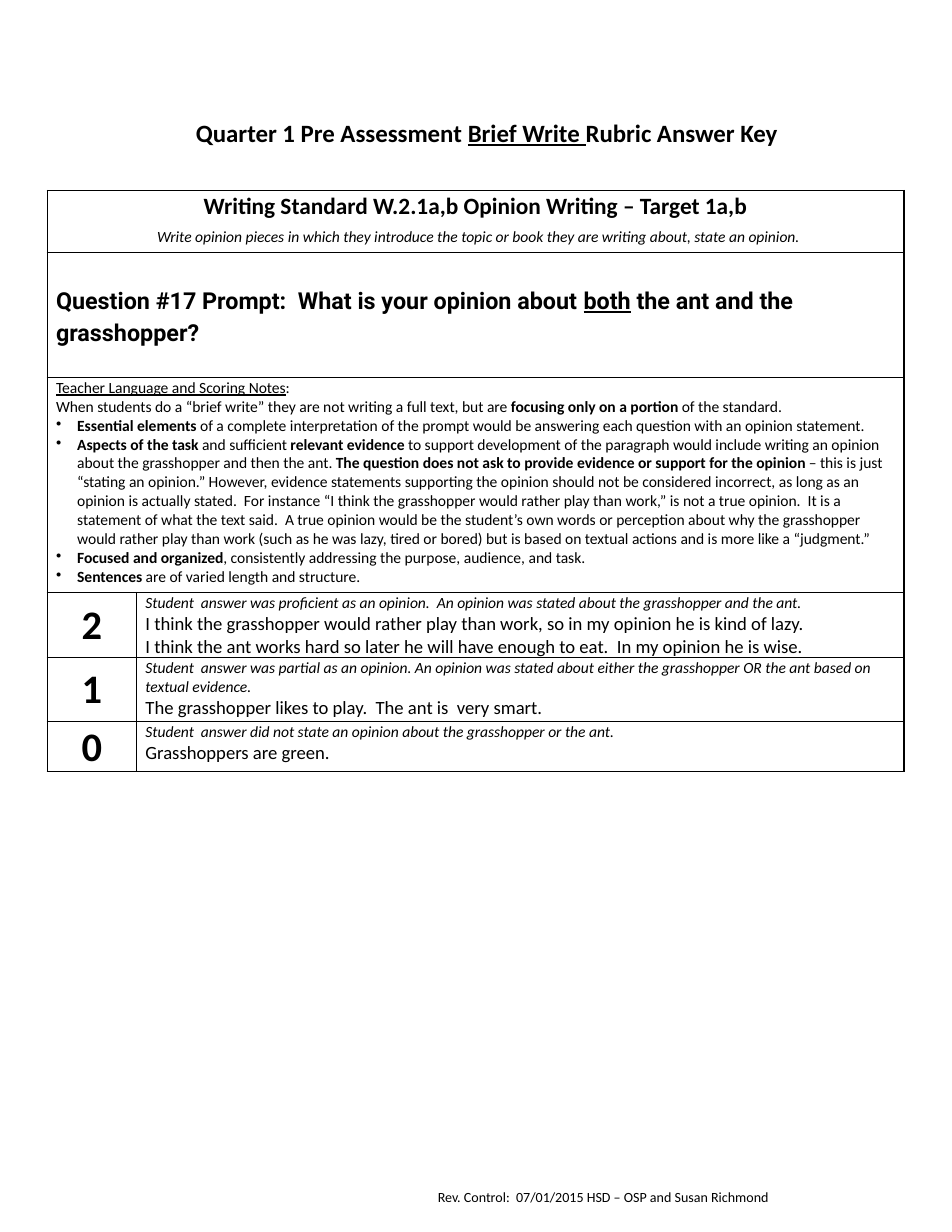
"""Build the one-page brief write rubric answer key."""
from dataclasses import dataclass
from typing import NamedTuple

from lxml import etree
from pptx import Presentation
from pptx import util as u
from pptx.dml.color import RGBColor
from pptx.enum import text as t
from pptx.oxml.ns import qn


@dataclass(frozen=True)
class Theme:
    ink: RGBColor = RGBColor(0, 0, 0)
    paper: RGBColor = RGBColor(255, 255, 255)
    body_font: str = "Calibri"
    prompt_font: str = "Roboto"
    title: float = 16
    heading: float = 15
    note: float = 10
    answer: float = 12
    score: float = 26
    footer: float = 9
    border: float = 1


THEME = Theme()


class Span(NamedTuple):
    text: str
    size: float = THEME.note
    bold: bool = False
    italic: bool = False
    underline: bool = False
    font: str = THEME.body_font


class Para(NamedTuple):
    spans: list[Span]
    centred: bool = False
    bullet: bool = False
    spacing: float | None = None


class Score(NamedTuple):
    points: str
    note: str
    answers: list[str]


TITLE = Para([
    Span("Quarter 1 Pre Assessment ", THEME.title, bold=True),
    Span("Brief Write ", THEME.title, bold=True, underline=True),
    Span("Rubric Answer Key", THEME.title, bold=True),
], centred=True)

FOOTER = Para([Span("Rev. Control:  07/01/2015 HSD – OSP and Susan Richmond", THEME.footer)])

STANDARD = [
    Para([Span("Writing Standard W.2.1a,b Opinion Writing – Target 1a,b", THEME.heading, bold=True)], centred=True),
    Para([
        Span(" ", THEME.heading),
        Span("Write opinion pieces in which they introduce the topic or book they are writing about, "
             "state an opinion.", italic=True),
    ], centred=True),
]

PROMPT = [Para([
    Span("Question #17 Prompt:  What is your opinion about ", THEME.heading, bold=True, font=THEME.prompt_font),
    Span("both", THEME.heading, bold=True, underline=True, font=THEME.prompt_font),
    Span(" the ant and the grasshopper?", THEME.heading, bold=True, font=THEME.prompt_font),
], spacing=1.15)]

NOTES = [
    Para([Span("Teacher Language and Scoring Notes", underline=True), Span(":")]),
    Para([
        Span("When students do a “brief write” they are not writing a full text, but are "),
        Span("focusing only on a portion ", bold=True),
        Span("of the standard."),
    ]),
    Para([
        Span("Essential elements ", bold=True),
        Span("of a complete interpretation of the prompt would be answering each question "
             "with an opinion statement."),
    ], bullet=True),
    Para([
        Span("Aspects of the task ", bold=True),
        Span("and sufficient "),
        Span("relevant evidence ", bold=True),
        Span("to support development of the paragraph would include writing an opinion "
             "about the grasshopper and then the ant. "),
        Span("The question does not ask to provide evidence or support for the opinion", bold=True),
        Span(" – this is just “stating an opinion.” However, evidence statements supporting the opinion "
             "should not be considered incorrect, as long as an opinion is actually stated.  For instance "
             "“I think the grasshopper would rather play than work,” is not a true opinion.  It is a "
             "statement of what the text said.  A true opinion would be the student’s own words or "
             "perception about why the grasshopper would rather play than work (such as he was lazy, "
             "tired or bored) but is based on textual actions and is more like a “judgment.”"),
    ], bullet=True),
    Para([
        Span("Focused and organized", bold=True),
        Span(", consistently addressing the purpose, audience, and task."),
    ], bullet=True),
    Para([Span("Sentences", bold=True), Span(" are of varied length and structure.")], bullet=True),
]

SCORES = [
    Score("2", "Student  answer was proficient as an opinion.  An opinion was stated about the grasshopper "
               "and the ant.",
          ["I think the grasshopper would rather play than work, so in my opinion he is kind of lazy.",
           "I think the ant works hard so later he will have enough to eat.  In my opinion he is wise."]),
    Score("1", "Student  answer was partial as an opinion. An opinion was stated about either the grasshopper "
               "OR the ant based on textual evidence.",
          ["The grasshopper likes to play.  The ant is  very smart."]),
    Score("0", "Student  answer did not state an opinion about the grasshopper or the ant.",
          ["Grasshoppers are green."]),
]

COLUMNS = [2.03, 17.4]
ROWS = [1.4, 2.84, 4.88, 1.45, 1.45, 1.14]


def add_span(para, text: str, *, size: float, bold: bool, italic: bool, underline: bool, font: str) -> None:
    span = para.add_run()
    span.text = text
    span.font.size = u.Pt(size)
    span.font.bold = bold
    span.font.italic = italic
    span.font.underline = underline
    span.font.name = font
    span.font.color.rgb = THEME.ink


def add_bullet(para) -> None:
    properties = para._p.get_or_add_pPr()
    properties.set("marL", str(u.Cm(0.48)))
    properties.set("indent", str(-u.Cm(0.48)))
    etree.SubElement(properties, qn("a:buChar")).set("char", "•")


def write(frame, paras: list[Para]) -> None:
    for index, item in enumerate(paras):
        para = frame.add_paragraph() if index else frame.paragraphs[0]
        para.alignment = t.PP_ALIGN.CENTER if item.centred else t.PP_ALIGN.LEFT
        if item.spacing:
            para.line_spacing = item.spacing
        if item.bullet:
            add_bullet(para)
        for span in item.spans:
            add_span(para, **span._asdict())


def add_box(slide, left: float, top: float, width: float, height: float, para: Para) -> None:
    box = slide.shapes.add_textbox(u.Cm(left), u.Cm(top), u.Cm(width), u.Cm(height))
    box.text_frame.word_wrap = True
    write(box.text_frame, [para])


def style_cell(cell) -> None:
    properties = cell._tc.get_or_add_tcPr()
    for side in ("lnL", "lnR", "lnT", "lnB"):
        line = etree.SubElement(properties, qn(f"a:{side}"), w=str(u.Pt(THEME.border)))
        fill = etree.SubElement(line, qn("a:solidFill"))
        etree.SubElement(fill, qn("a:srgbClr"), val=str(THEME.ink))
    cell.fill.solid()
    cell.fill.fore_color.rgb = THEME.paper
    cell.margin_left = cell.margin_right = u.Cm(0.2)
    cell.margin_top = u.Cm(0.03)
    cell.margin_bottom = u.Cm(0)


def add_rubric(slide, left: float, top: float) -> None:
    table = slide.shapes.add_table(len(ROWS), len(COLUMNS), u.Cm(left), u.Cm(top),
                                   u.Cm(sum(COLUMNS)), u.Cm(sum(ROWS))).table
    table.first_row = table.horz_banding = False
    for column, width in zip(table.columns, COLUMNS):
        column.width = u.Cm(width)
    for row, height in zip(table.rows, ROWS):
        row.height = u.Cm(height)
    for cell in table.iter_cells():
        style_cell(cell)

    sections = [STANDARD, PROMPT, NOTES]
    for row, paras in enumerate(sections):
        table.cell(row, 0).merge(table.cell(row, 1))
        write(table.cell(row, 0).text_frame, paras)
    table.cell(1, 0).vertical_anchor = t.MSO_ANCHOR.MIDDLE

    for row, score in enumerate(SCORES, len(sections)):
        points = table.cell(row, 0)
        points.vertical_anchor = t.MSO_ANCHOR.MIDDLE
        write(points.text_frame, [Para([Span(score.points, THEME.score, bold=True)], centred=True)])
        answers = [Para([Span(answer, THEME.answer)]) for answer in score.answers]
        write(table.cell(row, 1).text_frame, [Para([Span(score.note, italic=True)]), *answers])


def main() -> None:
    deck = Presentation()
    deck.slide_width, deck.slide_height = u.Cm(21.59), u.Cm(27.94)
    slide = deck.slides.add_slide(deck.slide_layouts[6])
    add_box(slide, 9.68, 26.82, 10.8, 0.66, FOOTER)
    add_rubric(slide, 1.07, 4.32)
    add_box(slide, 1.07, 2.54, 19.94, 1.8, TITLE)
    deck.save("out.pptx")


if __name__ == "__main__":
    main()
